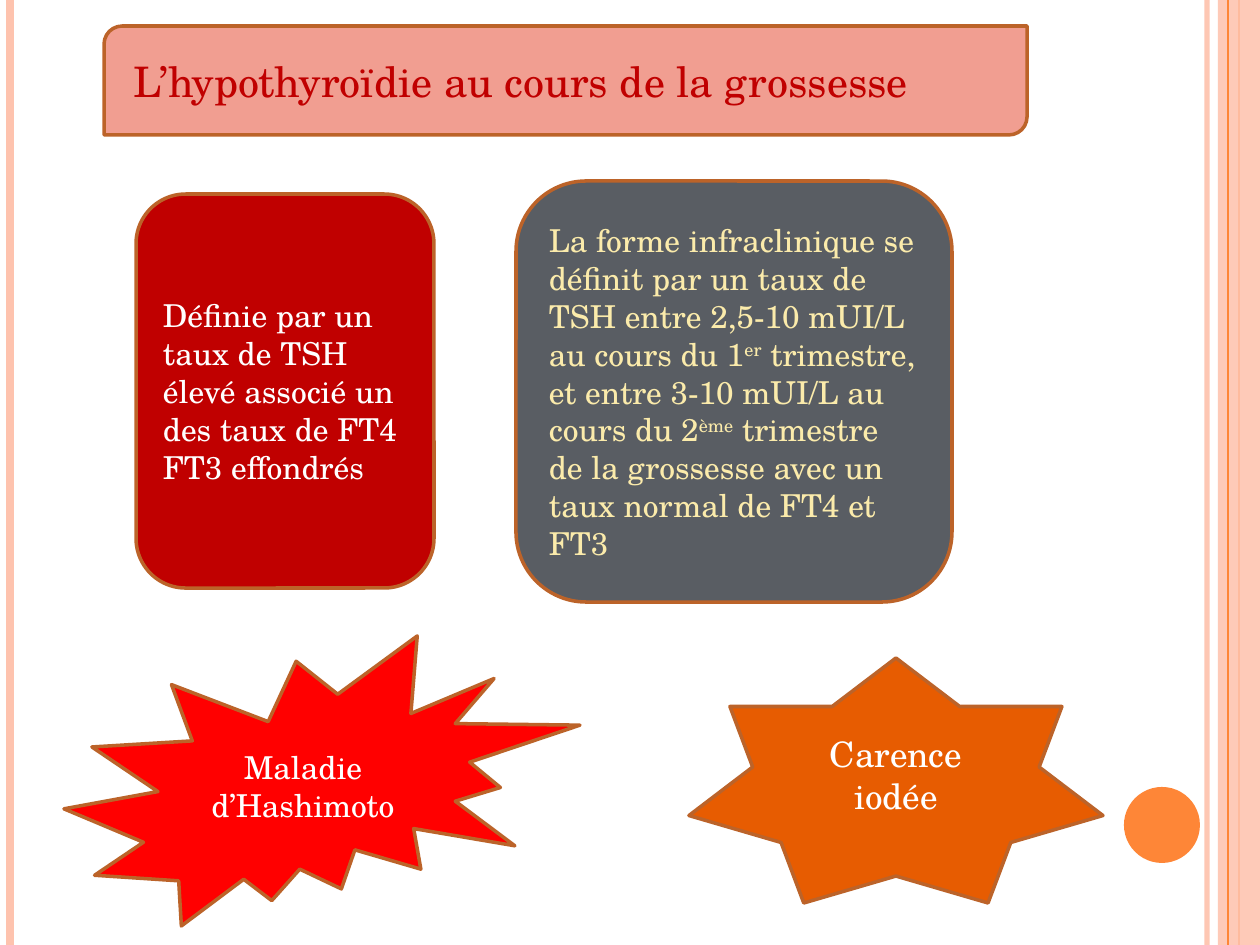
from dataclasses import dataclass
from typing import NamedTuple

from lxml.etree import SubElement
from pptx import Presentation
from pptx.dml.color import RGBColor as RGB
from pptx.enum.shapes import MSO_CONNECTOR as LINK, MSO_SHAPE as SHAPE
from pptx.enum.text import MSO_ANCHOR as ANCHOR, PP_ALIGN as ALIGN
from pptx.oxml.ns import qn
from pptx.util import Emu, Pt

SCALE = 914400 / 126  # EMU in one px
WIDE, HIGH = 1260, 945


@dataclass(frozen=True)
class Theme:
    font: str = "TeX Gyre Schola"
    pink: str = "FEC3AE"
    orange: str = "FE8637"
    edge: str = "BC6329"
    white: str = "FFFFFF"
    cream: str = "FBEBAB"
    crimson: str = "C00000"
    slate: str = "595D63"
    red: str = "FF0000"
    rust: str = "E75C01"
    salmon: str = "F19E91"
    body: int = 18
    label: int = 20
    title: int = 24


THEME = Theme()


class Box(NamedTuple):
    left: int
    top: int
    width: int
    height: int


class Stripe(NamedTuple):
    x: int
    color: str
    weight: float
    alpha: int = 100


@dataclass(frozen=True)
class Card:
    kind: SHAPE
    box: Box
    fill: str
    words: tuple[str, ...]  # every second piece is superscript
    color: str = THEME.white
    size: int = THEME.body
    align: ALIGN = ALIGN.LEFT
    before: int = 0


STRIPES = [
    Stripe(1207, THEME.pink, 3, 93),
    Stripe(10, THEME.pink, 4.5),
    Stripe(1239, THEME.orange, 1.5),
]
INNER = Stripe(1228, THEME.orange, 0.75)

CARDS = [
    Card(SHAPE.ROUNDED_RECTANGLE, Box(136, 194, 298, 394), THEME.crimson,
         ("Définie par un taux de TSH élevé associé un des taux de FT4 "
          "FT3 effondrés",)),
    Card(SHAPE.ROUNDED_RECTANGLE, Box(516, 181, 436, 421), THEME.slate,
         ("La forme infraclinique se définit par un taux de TSH entre "
          "2,5-10 mUI/L au cours du 1", "er",
          " trimestre, et entre 3-10 mUI/L au cours du 2", "ème",
          " trimestre de la grossesse avec un taux normal de FT4 et FT3"),
         color=THEME.cream),
    Card(SHAPE.EXPLOSION2, Box(64, 636, 516, 290), THEME.red,
         ("Maladie d’Hashimoto",), align=ALIGN.CENTER),
    Card(SHAPE.STAR_7_POINT, Box(689, 658, 414, 245), THEME.rust,
         ("Carence iodée",), size=THEME.label, align=ALIGN.CENTER),
    Card(SHAPE.ROUND_2_DIAG_RECTANGLE, Box(104, 26, 923, 109), THEME.salmon,
         (" L’hypothyroïdie au cours de la grossesse",),
         color=THEME.crimson, size=THEME.title, before=6),
]


def px(count: int) -> Emu:
    return Emu(round(count * SCALE))


def fade(props, alpha: int) -> None:
    """Set opacity, in percent, on the first solid colour in props."""
    if alpha < 100:
        color = props.find(".//" + qn("a:srgbClr"))
        SubElement(color, qn("a:alpha")).set("val", str(alpha * 1000))


def add_stripe(slide, stripe: Stripe) -> None:
    x = px(stripe.x)
    line = slide.shapes.add_connector(LINK.STRAIGHT, x, 0, x, px(HIGH))
    line.line.color.rgb = RGB.from_string(stripe.color)
    line.line.width = Pt(stripe.weight)
    props = line._element.spPr
    fade(props, stripe.alpha)
    SubElement(props, qn("a:effectLst"))


def add_form(slide, kind: SHAPE, box: Box, fill: str, *,
             edge: str | None = None, alpha: int = 100):
    form = slide.shapes.add_shape(kind, *map(px, box))
    form.shadow.inherit = False
    form.fill.solid()
    form.fill.fore_color.rgb = RGB.from_string(fill)
    fade(form._element.spPr, alpha)
    if edge:
        form.line.color.rgb = RGB.from_string(edge)
        form.line.width = Pt(2)
    else:
        form.line.fill.background()
    return form


def put_text(form, words: tuple[str, ...], *, color: str, size: int,
             align: ALIGN, before: int) -> None:
    frame = form.text_frame
    frame.word_wrap = True
    frame.vertical_anchor = ANCHOR.MIDDLE
    para = frame.paragraphs[0]
    para.alignment = align
    para.space_before = Pt(before)
    for i, piece in enumerate(words):
        run = para.add_run()
        run.text = piece
        run.font.name = THEME.font
        run.font.size = Pt(size)
        run.font.color.rgb = RGB.from_string(color)
        if i % 2:
            run._r.get_or_add_rPr().set("baseline", "30000")


def add_card(slide, card: Card) -> None:
    form = add_form(slide, card.kind, card.box, card.fill, edge=THEME.edge)
    put_text(form, card.words, color=card.color, size=card.size,
             align=card.align, before=card.before)


def main() -> None:
    deck = Presentation()
    deck.slide_width, deck.slide_height = px(WIDE), px(HIGH)
    slide = deck.slides.add_slide(deck.slide_layouts[6])

    # Side stripes, band and dot
    for stripe in STRIPES:
        add_stripe(slide, stripe)
    add_form(slide, SHAPE.RECTANGLE, Box(1218, 0, 42, HIGH), THEME.pink,
             alpha=87)
    add_stripe(slide, INNER)
    add_form(slide, SHAPE.OVAL, Box(1124, 787, 76, 76), THEME.orange)

    # Definitions, causes and title
    for card in CARDS:
        add_card(slide, card)

    deck.save("out.pptx")


if __name__ == "__main__":
    main()
